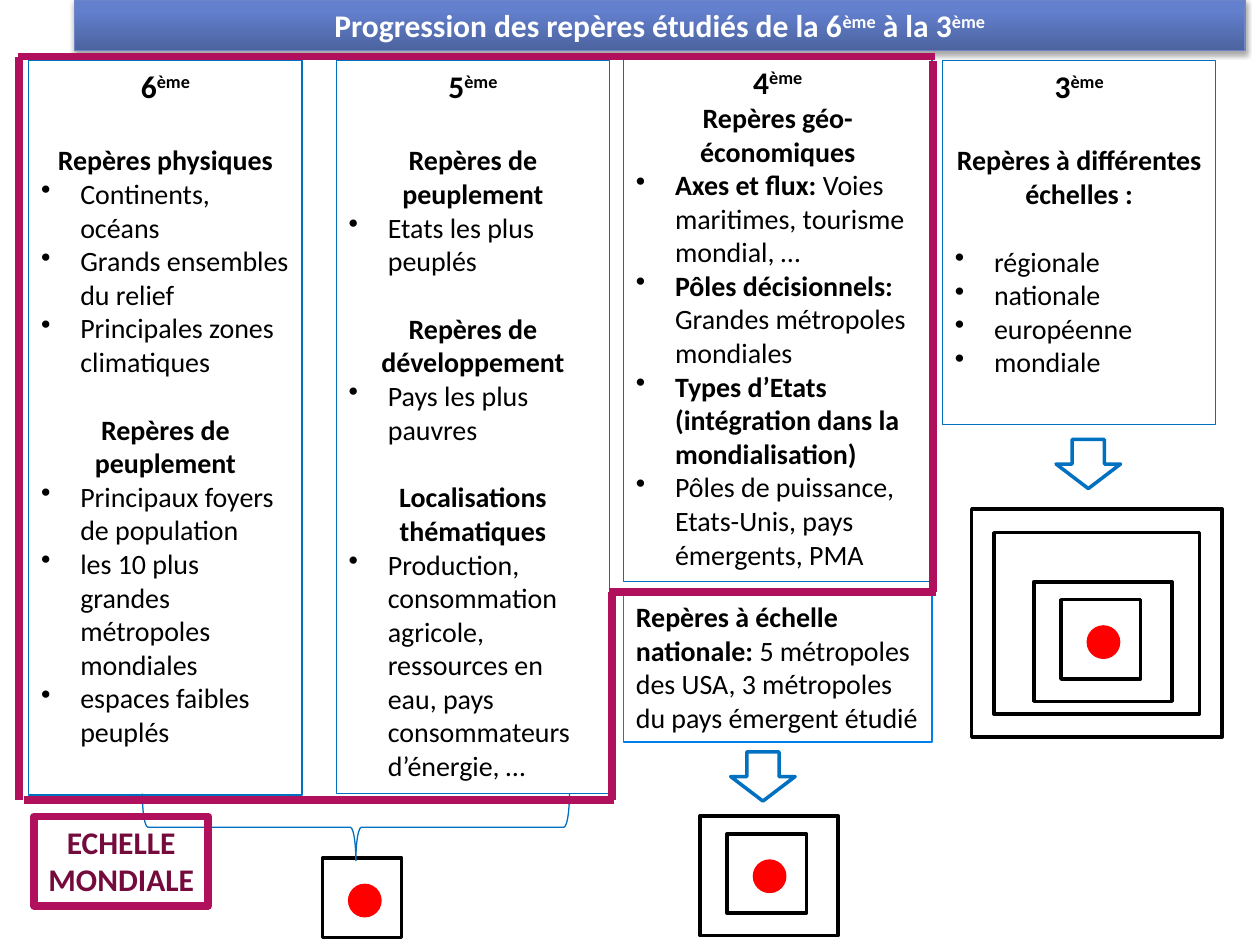
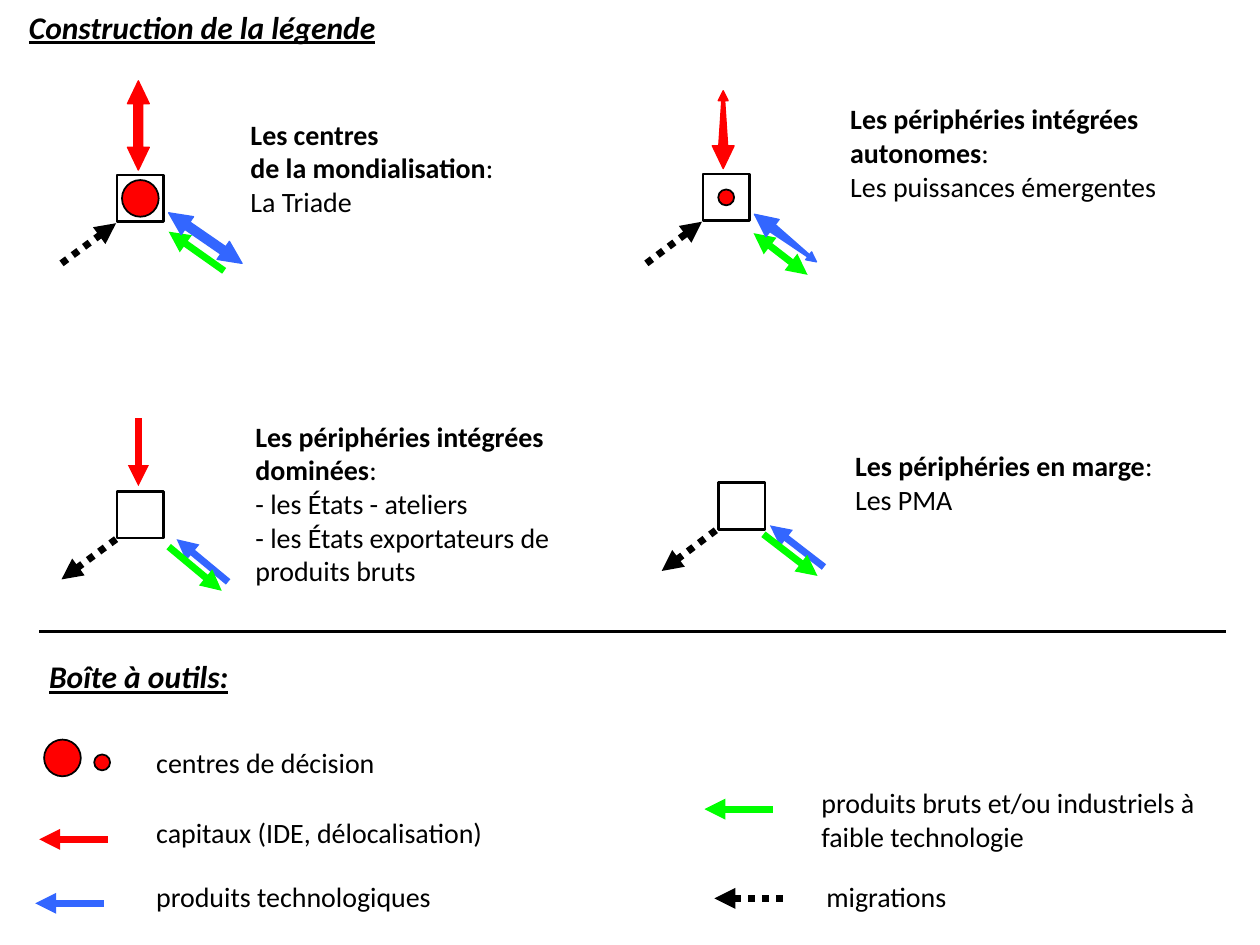
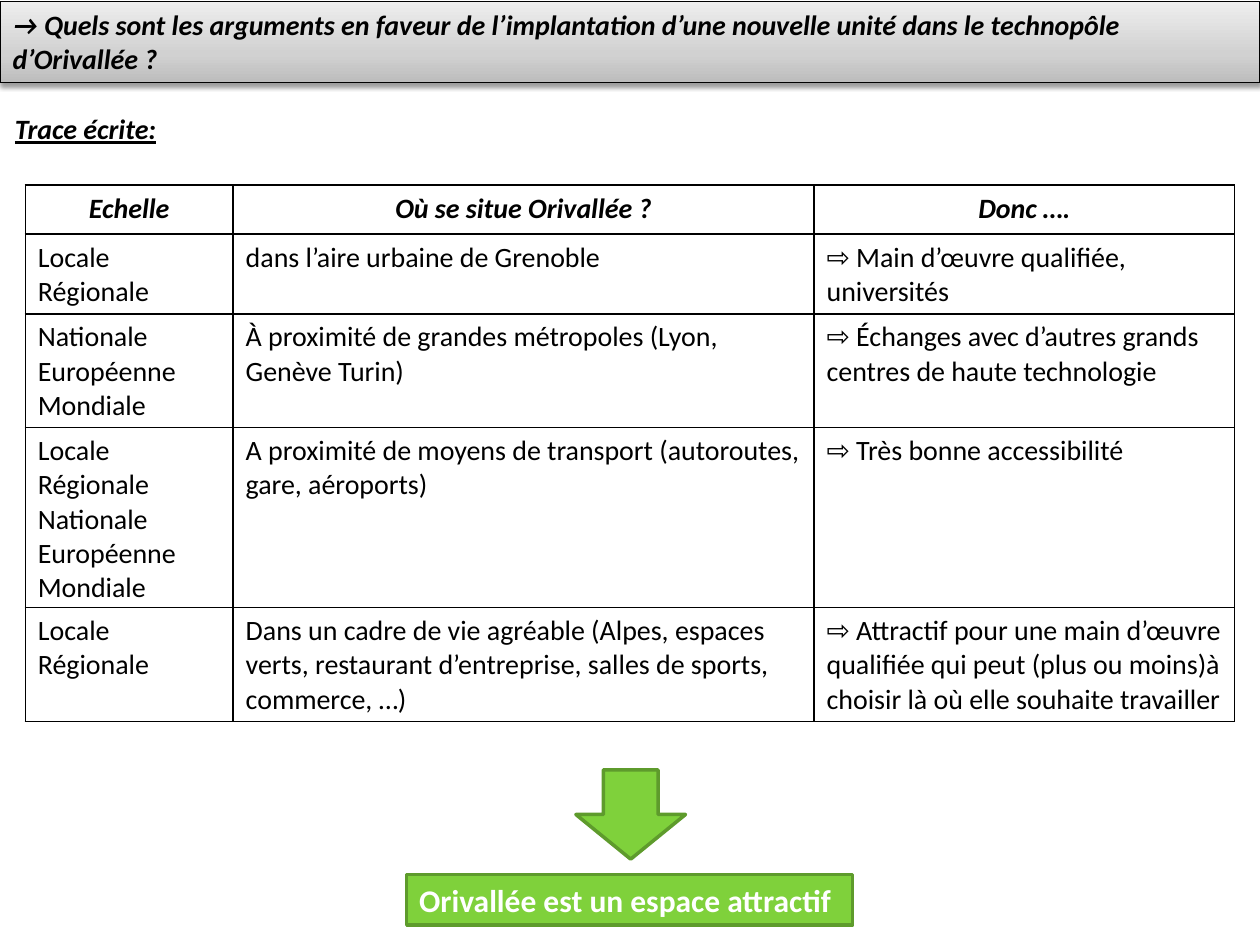
from dataclasses import dataclass
from math import hypot
from typing import NamedTuple

from lxml import etree
from pptx import Presentation
from pptx.dml.color import RGBColor
from pptx.enum.dml import MSO_LINE
from pptx.enum.shapes import MSO_CONNECTOR, MSO_SHAPE
from pptx.enum.text import MSO_ANCHOR, MSO_AUTO_SIZE, PP_ALIGN
from pptx.oxml.ns import qn
from pptx.util import Cm, Pt

RECT, OVAL = MSO_SHAPE.RECTANGLE, MSO_SHAPE.OVAL
DOWN_ARROW, LEFT_BRACE = MSO_SHAPE.DOWN_ARROW, MSO_SHAPE.LEFT_BRACE
STRAIGHT = MSO_CONNECTOR.STRAIGHT
LEFT, CENTER = PP_ALIGN.LEFT, PP_ALIGN.CENTER
TOP, NO_FIT = MSO_ANCHOR.TOP, MSO_AUTO_SIZE.NONE
DOTS = MSO_LINE.ROUND_DOT
TITLE_ONLY = 5


@dataclass(frozen=True)
class Theme:
    font: str = "Calibri"
    large: float = 18
    body: float = 16
    black: str = "000000"
    white: str = "FFFFFF"
    red: str = "FF0000"
    blue: str = "3366FF"
    green: str = "00FF00"
    outline: str = "0070C0"
    note_outline: str = "007EEB"
    plum: str = "B0105C"
    dark_plum: str = "750B3D"
    band_outline: str = "6E86C6"
    leaf: str = "7FD13B"
    dark_leaf: str = "5E9B2C"
    blue_band: tuple = ((0, "4C639F"), (80, "6380CE"), (100, "6180D1"))
    grey_band: tuple = ((0, "BDBDBD"), (35, "D1D1D1"), (100, "EEEEEE"))


THEME = Theme()


class Point(NamedTuple):
    x: float
    y: float


class Area(NamedTuple):
    left: float
    top: float
    width: float
    height: float

    def lengths(self) -> tuple:
        return tuple(Cm(value) for value in self)


class Span(NamedTuple):
    text: str
    bold: bool = False
    size: float = THEME.body
    color: str = THEME.black
    italic: bool = False
    underline: bool = False
    raised: bool = False


class Para(NamedTuple):
    spans: list
    align: PP_ALIGN = LEFT
    bullet: bool = False
    before: float = 0


class Arrow(NamedTuple):
    start: Point
    tip: Point
    color: str
    both: bool = False
    dotted: bool = False


class Barb(NamedTuple):
    """One end of a block arrow: head length, half head width, half shaft width."""
    length: float
    half: float
    shaft: float


class BlockArrow(NamedTuple):
    start: Point
    tip: Point
    color: str
    tip_barb: Barb


class Actor(NamedTuple):
    """One territory of the legend with its flows and its caption."""
    square: Point
    dot: float
    arrows: list
    blocks: list
    caption: Area
    name: str
    detail: str


class Tool(NamedTuple):
    caption: Area
    text: str
    tip: Point | None = None
    color: str = THEME.black
    dotted: bool = False


WIDE, THIN = Barb(.46, .22, .09), Barb(.2, .1, .03)
SQUARE, BIG_DOT, SMALL_DOT, TOOL_ARROW = .94, .74, .32, 1.38
LINE_GAP, LARGE_GAP = 19.5, 22


def rgb(color: str) -> RGBColor:
    return RGBColor.from_string(color)


def child(parent, tag: str, **attributes: str):
    return etree.SubElement(parent, qn(tag), attributes)


def write(frame, paras: list) -> None:
    frame.word_wrap = True
    frame.auto_size = NO_FIT
    frame.vertical_anchor = TOP
    fill_paragraphs(frame, paras)


def fill_paragraphs(frame, paras: list) -> None:
    for index, item in enumerate(paras):
        para = frame.add_paragraph() if index else frame.paragraphs[0]
        para.alignment = item.align
        para.space_before = Pt(item.before)
        if item.bullet:
            properties = para._p.get_or_add_pPr()
            properties.set("marL", str(Cm(.79)))
            properties.set("indent", str(-Cm(.79)))
            child(properties, "a:buChar", char="•")
        for span in item.spans:
            add_span(para, span)


def add_span(para, span: Span) -> None:
    for index, line in enumerate(span.text.split("\n")):
        if index:
            para.add_line_break()
        if not line:
            continue
        run = para.add_run()
        run.text = line
        font = run.font
        font.name, font.size = THEME.font, Pt(span.size)
        font.bold, font.italic, font.underline = span.bold, span.italic, span.underline
        font.color.rgb = rgb(span.color)
        if span.raised:
            run._r.get_or_add_rPr().set("baseline", "30000")


def paint(shape, fill: str | None, line: str, weight: float) -> None:
    shape.shadow.inherit = False
    if fill:
        shape.fill.solid()
        shape.fill.fore_color.rgb = rgb(fill)
    else:
        shape.fill.background()
    shape.line.color.rgb = rgb(line)
    shape.line.width = Pt(weight)


def add_figure(slide, kind, area: Area, line: str, weight: float,
               fill: str | None = None, paras: list | None = None):
    shape = slide.shapes.add_shape(kind, *area.lengths())
    paint(shape, fill, line, weight)
    if paras:
        write(shape.text_frame, paras)
    return shape


def add_text(slide, area: Area, spans: list) -> None:
    write(slide.shapes.add_textbox(*area.lengths()).text_frame, [Para(spans)])


def add_line(slide, start: Point, end: Point, color: str, weight: float):
    line = slide.shapes.add_connector(STRAIGHT, Cm(start.x), Cm(start.y), Cm(end.x), Cm(end.y))
    line.line.color.rgb = rgb(color)
    line.line.width = Pt(weight)
    child(line.element.spPr, "a:effectLst")
    return line


def add_arrow(slide, arrow: Arrow) -> None:
    line = add_line(slide, arrow.start, arrow.tip, arrow.color, 4)
    if arrow.dotted:
        line.line.dash_style = DOTS
    outline = line.element.spPr.find(qn("a:ln"))
    if arrow.both:
        child(outline, "a:headEnd", type="triangle")
    child(outline, "a:tailEnd", type="triangle")


def add_block_arrow(slide, arrow: BlockArrow) -> None:
    """Draws a two-headed arrow whose shaft may taper towards its tip."""
    (x, y), (tip_x, tip_y) = arrow.start, arrow.tip
    length = hypot(tip_x - x, tip_y - y)
    ux, uy = (tip_x - x) / length, (tip_y - y) / length
    near, far = WIDE, arrow.tip_barb
    neck = length - far.length
    side = [(near.length, near.half), (near.length, near.shaft), (neck, far.shaft), (neck, far.half)]
    outline = [*side, (length, 0), *((along, -across) for along, across in reversed(side))]
    points = [(Cm(x + along * ux - across * uy), Cm(y + along * uy + across * ux))
              for along, across in outline]
    builder = slide.shapes.build_freeform(Cm(x), Cm(y))
    builder.add_line_segments(points, close=True)
    paint(builder.convert_to_shape(), arrow.color, arrow.color, .75)


def add_slide(deck, area: Area, spans: list, align: PP_ALIGN = LEFT):
    """Adds a title-only slide and returns it with its title formatted."""
    slide = deck.slides.add_slide(deck.slide_layouts[TITLE_ONLY])
    title = slide.shapes.title
    title.left, title.top, title.width, title.height = area.lengths()
    write(title.text_frame, [Para(spans, align)])
    return slide


def make_band(title, stops: tuple, line: str, opacity: int) -> None:
    paint(title, None, line, .75)
    title.fill.gradient()
    title.fill.gradient_angle = 90
    stop_list = title.element.spPr.find(qn("a:gradFill")).find(qn("a:gsLst"))
    for stop in list(stop_list):
        stop_list.remove(stop)
    for position, color in stops:
        child(child(stop_list, "a:gs", pos=str(position * 1000)), "a:srgbClr", val=color)
    effects = title.element.spPr.find(qn("a:effectLst"))
    shadow = child(effects, "a:outerShdw", blurRad=str(Pt(3.1)), dist=str(Pt(1.7)),
                   dir="5400000", rotWithShape="0")
    child(child(shadow, "a:srgbClr", val=THEME.black), "a:alpha", val=str(opacity * 1000))


def grade(number: str) -> Para:
    return Para([Span(number, True, THEME.large), Span("ème", True, THEME.large, raised=True)], CENTER)


def heading(text: str, before: float = LINE_GAP) -> Para:
    return Para([Span(text, True)], CENTER, before=before)


def bullet(text: str, lead: str = "", before: float = 0) -> Para:
    spans = [Span(lead, True)] if lead else []
    return Para([*spans, Span(text)] if text else spans, bullet=True, before=before)


GRADES = [
    (Area(.58, 1.22, 5.51, 14.81), [
        grade("6"), heading("Repères physiques", LARGE_GAP),
        bullet("Continents, océans"), bullet("Grands ensembles du relief"),
        bullet("Principales zones climatiques"),
        heading("Repères de peuplement"),
        bullet("Principaux foyers de population"),
        bullet("les 10 plus grandes métropoles mondiales"),
        bullet("espaces faibles peuplés")]),
    (Area(6.78, 1.22, 5.51, 14.78), [
        grade("5"), heading("Repères de peuplement", LARGE_GAP),
        bullet("Etats les plus peuplés"),
        heading("Repères de développement"), bullet("Pays les plus pauvres"),
        heading("Localisations thématiques"),
        bullet("Production, consommation agricole, ressources en eau, "
               "pays consommateurs d’énergie, …")]),
    (Area(12.57, 1.14, 6.22, 10.59), [
        grade("4"), heading("Repères géo-économiques", 0),
        bullet("Voies maritimes, tourisme mondial, …", "Axes et flux: "),
        bullet("Grandes métropoles mondiales", "Pôles décisionnels: "),
        bullet("", "Types d’Etats (intégration dans la mondialisation)"),
        bullet("Pôles de puissance, Etats-Unis, pays émergents, PMA")]),
    (Area(19, 1.22, 5.51, 7.34), [
        grade("3"), heading("Repères à différentes échelles :", LARGE_GAP),
        bullet("régionale", before=LINE_GAP), bullet("nationale"),
        bullet("européenne"), bullet("mondiale")]),
]
WORLD_FRAME = [
    (Point(.36, 1.14), Point(18.85, 1.14)), (Point(.48, 16.13), Point(12.37, 16.13)),
    (Point(.38, 1.14), Point(.38, 16.13)), (Point(12.34, 16.13), Point(12.34, 11.94)),
    (Point(12.27, 11.94), Point(18.87, 11.94)), (Point(18.8, 11.94), Point(18.8, 1.22)),
]
# Scale frames around the core square, innermost first
SCALES = [Area(0, 0, 1.6, 1.6), Area(-.55, -.36, 2.79, 2.41),
          Area(-1.35, -1.35, 4.14, 3.66), Area(-1.8, -1.83, 5.05, 4.6)]
NESTS = [(Point(6.5, 17.3), 1), (Point(14.66, 16.81), 2), (Point(21.39, 12.09), 4)]


def add_nest(slide, core: Point, depth: int) -> None:
    for scale in reversed(SCALES[:depth]):
        area = Area(core.x + scale.left, core.y + scale.top, scale.width, scale.height)
        fill = THEME.white if scale is SCALES[0] else None
        add_figure(slide, RECT, area, THEME.black, 2, fill)
    add_figure(slide, OVAL, Area(core.x + .55, core.y + .55, .61, .61), THEME.red, 2, THEME.red)


def build_progression(deck) -> None:
    parts = ["Progression des repères étudiés de la 6", "ème", " à la 3", "ème"]
    spans = [Span(text, True, THEME.large, THEME.white, raised=text == "ème") for text in parts]
    slide = add_slide(deck, Area(1.5, 0, 23.6, 1.02), spans, CENTER)
    make_band(slide.shapes.title, THEME.blue_band, THEME.band_outline, 35)
    for area, paras in GRADES:
        add_figure(slide, RECT, area, THEME.outline, .75, paras=paras)
    for left, top in ((14.73, 15.16), (21.29, 8.86)):
        add_figure(slide, DOWN_ARROW, Area(left, top, 1.3, .99), THEME.outline, 2)
    add_nest(slide, *NESTS[0])
    brace = add_figure(slide, LEFT_BRACE, Area(6.5, 12.37, 1.35, 8.61), THEME.outline, .75)
    brace.rotation = 270
    national = Para([Span("Repères à échelle nationale: ", True),
                     Span("5 métropoles des USA, 3 métropoles du pays émergent étudié")])
    add_figure(slide, RECT, Area(12.57, 11.96, 6.22, 3), THEME.note_outline, .75, paras=[national])
    for start, end in WORLD_FRAME:
        add_line(slide, start, end, THEME.plum, 4.5)
    label = Para([Span("ECHELLE MONDIALE", True, THEME.large, THEME.dark_plum)], CENTER)
    add_figure(slide, RECT, Area(.69, 16.46, 3.51, 1.8), THEME.plum, 4.5, paras=[label])
    for core, depth in NESTS[1:]:
        add_nest(slide, core, depth)


def migration(start: Point, tip: Point) -> Arrow:
    return Arrow(start, tip, THEME.black, dotted=True)


ACTORS = [
    Actor(Point(2.36, 3.53), BIG_DOT,
          [migration(Point(1.24, 5.31), Point(2.34, 4.5)),
           Arrow(Point(4.52, 5.46), Point(3.4, 4.67), THEME.green)],
          [BlockArrow(Point(3.4, 4.29), Point(4.88, 5.31), THEME.blue, WIDE),
           BlockArrow(Point(2.79, 1.63), Point(2.79, 3.43), THEME.red, WIDE)],
          Area(4.8, 2.24, 6.2, 2.29), "Les centres\nde la mondialisation", "La Triade"),
    Actor(Point(14.17, 3.51), SMALL_DOT,
          [Arrow(Point(15.19, 4.7), Point(16.28, 5.54), THEME.green, both=True),
           migration(Point(13.03, 5.31), Point(14.15, 4.47))],
          [BlockArrow(Point(15.21, 4.32), Point(16.46, 5.28), THEME.blue, THIN),
           BlockArrow(Point(14.58, 3.4), Point(14.58, 1.83), THEME.red, THIN)],
          Area(16.89, 1.93, 7.39, 3), "Les périphéries intégrées\nautonomes",
          "Les puissances émergentes"),
    Actor(Point(2.36, 9.91), 0,
          [Arrow(Point(4.6, 11.73), Point(3.56, 10.87), THEME.blue),
           Arrow(Point(3.4, 11.02), Point(4.47, 11.91), THEME.green),
           Arrow(Point(2.79, 8.43), Point(2.79, 9.8), THEME.red),
           migration(Point(2.34, 10.87), Point(1.24, 11.68))], [],
          Area(4.9, 8.33, 7.39, 3.66), "Les périphéries intégrées\ndominées",
          "- les États - ateliers\n- les États exportateurs de\nproduits bruts"),
    Actor(Point(14.48, 9.73), 0,
          [Arrow(Point(16.61, 11.43), Point(15.52, 10.59), THEME.blue),
           Arrow(Point(15.39, 10.77), Point(16.48, 11.61), THEME.green),
           migration(Point(14.43, 10.69), Point(13.34, 11.51))], [],
          Area(16.99, 8.92, 7.7, 1.63), "Les périphéries en marge", "Les PMA"),
]
TOOLS = [
    Tool(Area(2.9, 14.91, 6.7, .94), "centres de décision"),
    Tool(Area(2.9, 16.31, 7.9, .94), "capitaux (IDE, délocalisation)", Point(.79, 16.92), THEME.red),
    Tool(Area(2.9, 17.6, 6.7, .94), "produits technologiques", Point(.71, 18.21), THEME.blue),
    Tool(Area(16.31, 15.72, 8.51, 1.63), "produits bruts et/ou industriels à faible technologie",
         Point(14.2, 16.31), THEME.green),
    Tool(Area(16.41, 17.6, 6.7, .94), "migrations", Point(14.4, 18.11), dotted=True),
]


def add_dot(slide, left: float, top: float, size: float) -> None:
    add_figure(slide, OVAL, Area(left, top, size, size), THEME.black, 1, THEME.red)


def add_actor(slide, actor: Actor) -> None:
    for arrow in actor.arrows:
        add_arrow(slide, arrow)
    for block in actor.blocks:
        add_block_arrow(slide, block)
    left, top = actor.square
    add_figure(slide, RECT, Area(left, top, SQUARE, SQUARE), THEME.black, 1.5, THEME.white)
    if actor.dot:
        inset = (SQUARE - actor.dot) / 2
        add_dot(slide, left + inset, top + inset, actor.dot)
    add_text(slide, actor.caption, [Span(actor.name, True), Span(":\n" + actor.detail)])


def underlined(text: str, size: float) -> list:
    return [Span(text, True, size, italic=True, underline=True)]


def build_legend(deck) -> None:
    slide = add_slide(deck, Area(.33, .03, 9.25, 1.02),
                      underlined("Construction de la légende", THEME.large))
    for actor in ACTORS:
        add_actor(slide, actor)
    add_line(slide, Point(.79, 12.73), Point(24.71, 12.73), THEME.black, 2)
    add_text(slide, Area(.74, 13.13, 6.15, 1.02), underlined("Boîte à outils:", THEME.large))
    add_dot(slide, .89, 14.91, BIG_DOT)
    add_dot(slide, 1.9, 15.21, SMALL_DOT)
    for tool in TOOLS:
        add_text(slide, tool.caption, [Span(tool.text)])
        if tool.tip:
            start = Point(tool.tip.x + TOOL_ARROW, tool.tip.y)
            add_arrow(slide, Arrow(start, tool.tip, tool.color, dotted=tool.dotted))


COLUMN_WIDTHS = [4.19, 11.71, 8.48]
ROW_HEIGHTS = [.99, 1.61, 2.29, 3.63, 2.29]
NEAR, FAR = ["Locale", "Régionale"], ["Nationale", "Européenne", "Mondiale"]
ARGUMENTS = [
    (["Echelle"], "Où se situe Orivallée ?", "Donc …."),
    (NEAR, "dans l’aire urbaine de Grenoble", "⇨ Main d’œuvre qualifiée, universités"),
    (FAR, "À proximité de grandes métropoles (Lyon, Genève Turin)",
     "⇨ Échanges avec d’autres grands centres de haute technologie"),
    (NEAR + FAR, "A proximité de moyens de transport (autoroutes, gare, aéroports)",
     "⇨ Très bonne accessibilité"),
    (NEAR, "Dans un cadre de vie agréable (Alpes, espaces verts, restaurant d’entreprise, "
           "salles de sports, commerce, …)",
     "⇨ Attractif pour une main d’œuvre qualifiée qui peut (plus ou moins)à choisir "
     "là où elle souhaite travailler"),
]


def add_borders(cell) -> None:
    properties = cell._tc.get_or_add_tcPr()
    for index, side in enumerate(("a:lnL", "a:lnR", "a:lnT", "a:lnB")):
        line = etree.Element(qn(side), w=str(Pt(1)))
        child(child(line, "a:solidFill"), "a:srgbClr", val=THEME.black)
        properties.insert(index, line)


def add_arguments(slide) -> None:
    area = Area(.51, 3.73, sum(COLUMN_WIDTHS), sum(ROW_HEIGHTS))
    table = slide.shapes.add_table(len(ROW_HEIGHTS), len(COLUMN_WIDTHS), *area.lengths()).table
    table.first_row = table.horz_banding = False
    for column, width in zip(table.columns, COLUMN_WIDTHS):
        column.width = Cm(width)
    for index, (row, height) in enumerate(zip(table.rows, ROW_HEIGHTS)):
        row.height = Cm(height)
        head = index == 0
        scales, place, effect = ARGUMENTS[index]
        for cell, lines in zip(row.cells, (scales, [place], [effect])):
            cell.fill.background()
            cell.margin_bottom = Cm(.05)
            add_borders(cell)
            fill_paragraphs(cell.text_frame, [
                Para([Span(line, head, italic=head)], CENTER if head else LEFT) for line in lines])


def build_arguments(deck) -> None:
    question = ("→ Quels sont les arguments en faveur de l’implantation d’une nouvelle unité "
                "dans le technopôle d’Orivallée ?")
    slide = add_slide(deck, Area(0, .03, 25.4, 1.63), [Span(question, True, italic=True)])
    make_band(slide.shapes.title, THEME.grey_band, THEME.black, 38)
    add_arguments(slide)
    add_figure(slide, DOWN_ARROW, Area(11.61, 15.52, 2.21, 1.8), THEME.dark_leaf, 2, THEME.leaf)
    answer = Para([Span("Orivallée est un espace attractif", True, THEME.large, THEME.white)])
    add_figure(slide, RECT, Area(8.2, 17.63, 8.99, 1.02), THEME.dark_leaf, 2, THEME.leaf, [answer])
    add_text(slide, Area(.05, 2.13, 3.6, .94), underlined("Trace écrite:", THEME.body))


def main() -> None:
    deck = Presentation()
    deck.slide_width, deck.slide_height = Cm(25.4), Cm(19.05)
    build_progression(deck)
    build_legend(deck)
    build_arguments(deck)
    deck.save("out.pptx")


if __name__ == "__main__":
    main()
